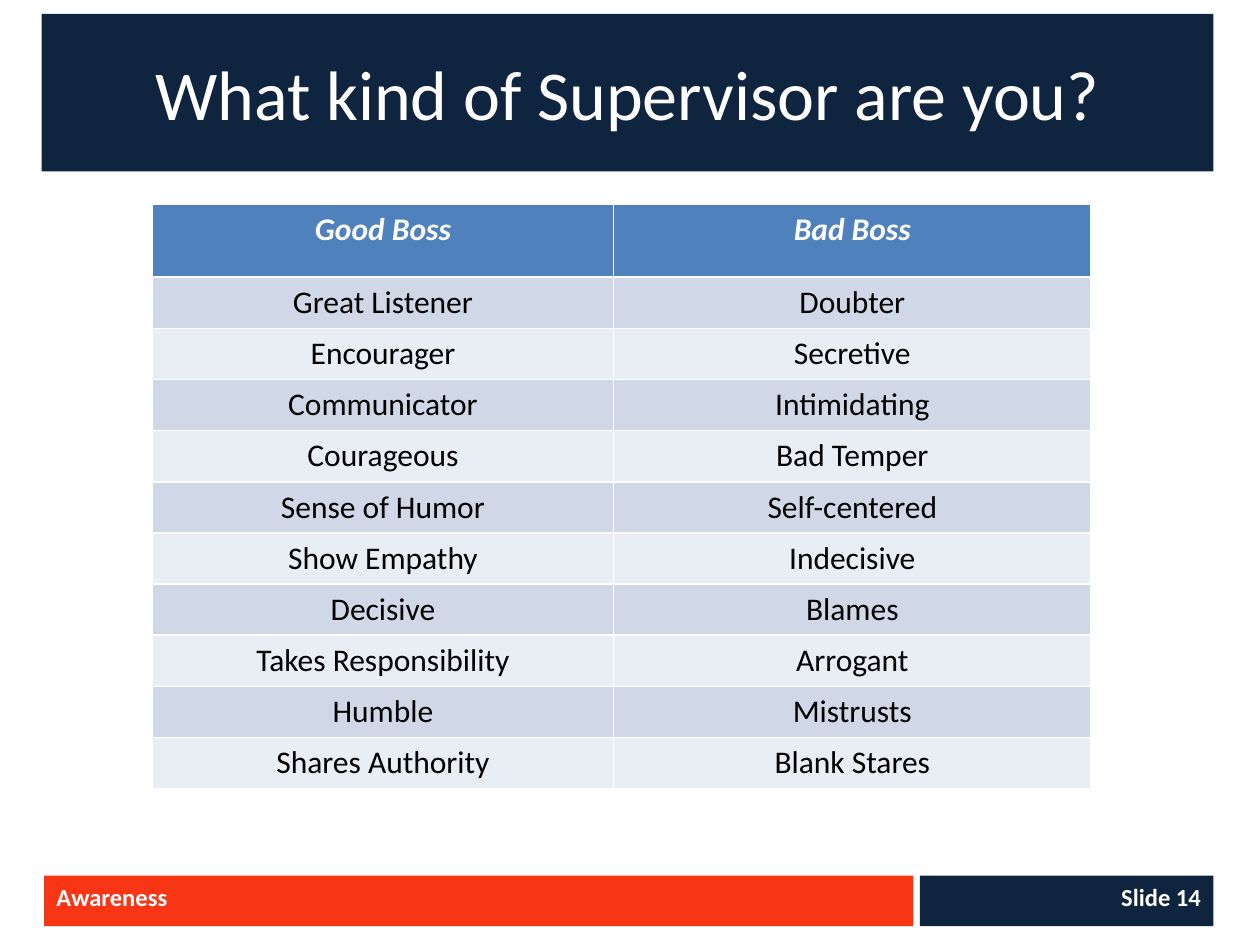
"""Build the supervisor slide: a title bar, a good/bad boss table and a footer."""
import pptx
import pptx.util
import pptx.dml.color
import pptx.enum.shapes
import pptx.enum.text
from dataclasses import dataclass

Inches = pptx.util.Inches
RGB = pptx.dml.color.RGBColor.from_string
ALIGN = pptx.enum.text.PP_ALIGN
ANCHOR = pptx.enum.text.MSO_ANCHOR


@dataclass(frozen=True)
class Theme:
    font: str = "Calibri"
    navy: str = "0F243E"
    red: str = "F83616"
    white: str = "FFFFFF"
    black: str = "000000"
    header: str = "4F81BD"
    bands: tuple = ("D0D8E8", "E9EDF4")
    title_size: int = 40
    table_size: int = 18
    footer_size: int = 14


theme = Theme()


def fill(obj, color):
    obj.fill.solid()
    obj.fill.fore_color.rgb = RGB(color)


def write(tf, text, size, color, align, bold=False, italic=False):
    tf.text = text
    p = tf.paragraphs[0]
    p.alignment = align
    p.font.name = theme.font
    p.font.size = pptx.util.Pt(size)
    p.font.color.rgb = RGB(color)
    p.font.bold = bold
    p.font.italic = italic


prs = pptx.Presentation()
prs.slide_width, prs.slide_height = Inches(10), Inches(7.5)
s = prs.slides.add_slide(prs.slide_layouts[5])

title = s.shapes.title
title.left, title.top = Inches(0.33), Inches(0.11)
title.width, title.height = Inches(9.3), Inches(1.25)
fill(title, theme.navy)
title.text_frame.vertical_anchor = ANCHOR.MIDDLE
write(title.text_frame, "What kind of Supervisor are you?", theme.title_size, theme.white, ALIGN.CENTER)

footers = [
    ("Slide 14", 7.3, 2.33, theme.navy, ALIGN.RIGHT),
    ("Awareness", 0.35, 6.9, theme.red, ALIGN.LEFT),
]
for text, left, width, color, align in footers:
    sp = s.shapes.add_shape(
        pptx.enum.shapes.MSO_SHAPE.RECTANGLE, Inches(left), Inches(6.95), Inches(width), Inches(0.4)
    )
    sp.shadow.inherit = False
    fill(sp, color)
    sp.line.fill.background()
    sp.text_frame.vertical_anchor = ANCHOR.TOP
    write(sp.text_frame, text, theme.footer_size, theme.white, align, bold=True)

rows = [
    ("Good Boss", "Bad Boss"),
    ("Great Listener", "Doubter"),
    ("Encourager", "Secretive"),
    ("Communicator", "Intimidating"),
    ("Courageous", "Bad Temper"),
    ("Sense of Humor", "Self-centered"),
    ("Show Empathy", "Indecisive"),
    ("Decisive", "Blames"),
    ("Takes Responsibility", "Arrogant"),
    ("Humble", "Mistrusts"),
    ("Shares Authority", "Blank Stares"),
]
table = s.shapes.add_table(
    len(rows), 2, Inches(1.21), Inches(1.62), Inches(7.45), Inches(4.64)
).table
for column, width in zip(table.columns, (3.66, 3.79)):
    column.width = Inches(width)
for i, row in enumerate(rows):
    is_header = i == 0
    table.rows[i].height = Inches(0.58 if is_header else 0.406)
    for j, text in enumerate(row):
        cell = table.cell(i, j)
        fill(cell, theme.header if is_header else theme.bands[(i - 1) % 2])
        color = theme.white if is_header else theme.black
        write(cell.text_frame, text, theme.table_size, color, ALIGN.CENTER, is_header, is_header)

prs.save("out.pptx")
